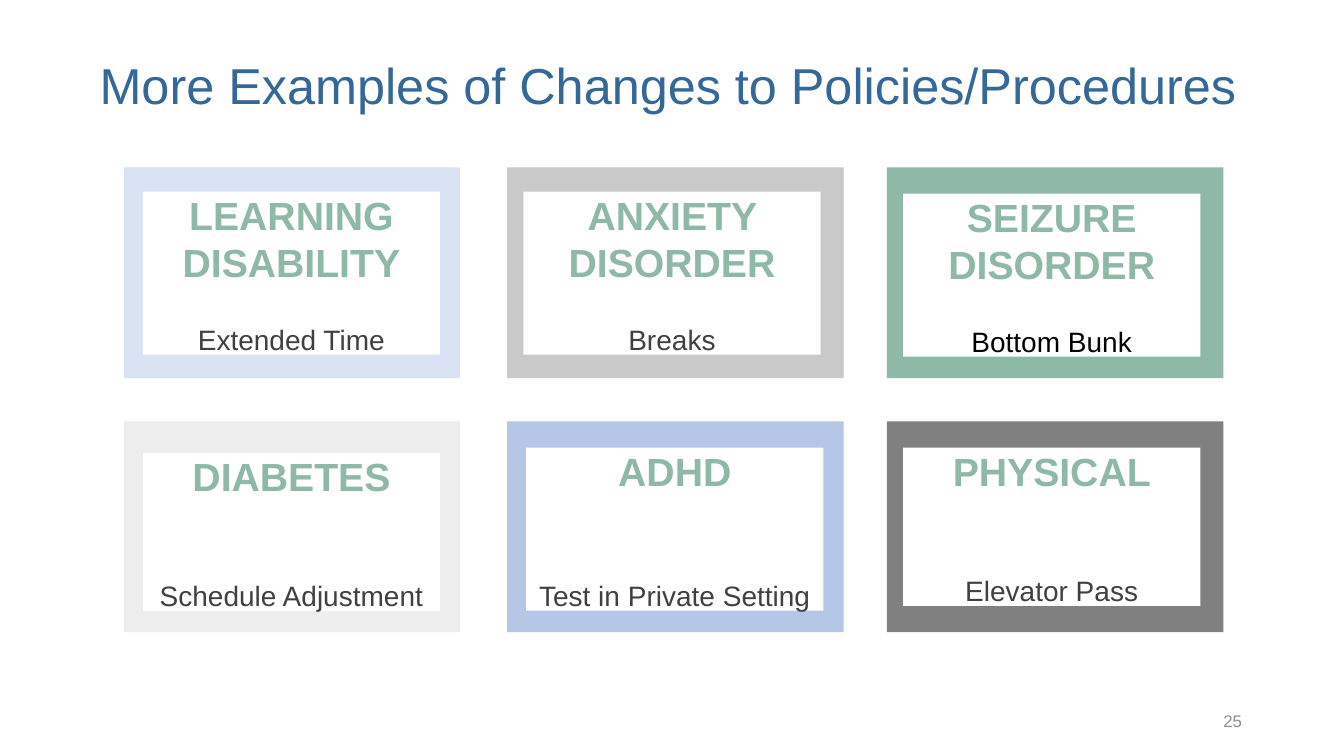
import pptx
import pptx.dml.color
import pptx.enum.shapes
import pptx.enum.text
import pptx.util

Cm = pptx.util.Cm
Pt = pptx.util.Pt
RGBColor = pptx.dml.color.RGBColor
ALIGN = pptx.enum.text.PP_ALIGN
ANCHOR = pptx.enum.text.MSO_ANCHOR

FONT = "Arial"
TITLE_BLUE = RGBColor(0x34, 0x68, 0x98)
GREEN = RGBColor(0x8D, 0xB9, 0xA6)
PALE_BLUE = RGBColor(0xDA, 0xE3, 0xF3)
MID_BLUE = RGBColor(0xB4, 0xC7, 0xE7)
SILVER = RGBColor(0xC9, 0xC9, 0xC9)
PALE_GRAY = RGBColor(0xED, 0xED, 0xED)
GRAY = RGBColor(0x80, 0x80, 0x80)
NUMBER_GRAY = RGBColor(0x8C, 0x8C, 0x8C)
DARK_GRAY = RGBColor(0x40, 0x40, 0x40)
BLACK = RGBColor(0, 0, 0)
WHITE = RGBColor(0xFF, 0xFF, 0xFF)

COLUMN_LEFTS = (3.12, 12.78, 22.35)
ROW_TOPS = (4.22, 10.62)
FRAME_WIDTH, FRAME_HEIGHT = 8.48, 5.31
PANEL_WIDTH = 7.49
HEADING_LINE = Pt(33.6)
DETAIL_LINE = Pt(23)

# heading, detail, frame colour, detail colour, panel offsets and height in cm
CARDS = [
    ("LEARNING DISABILITY", "Extended Time", PALE_BLUE, DARK_GRAY, 0.48, 0.61, 4.11),
    ("ANXIETY DISORDER", "Breaks", SILVER, DARK_GRAY, 0.41, 0.61, 4.11),
    ("SEIZURE DISORDER", "Bottom Bunk", GREEN, BLACK, 0.41, 0.66, 4.11),
    ("DIABETES", "Schedule Adjustment", PALE_GRAY, DARK_GRAY, 0.48, 0.79, 3.99),
    ("ADHD", "Test in Private Setting", MID_BLUE, DARK_GRAY, 0.48, 0.66, 4.11),
    ("PHYSICAL", "Elevator Pass", GRAY, DARK_GRAY, 0.41, 0.66, 3.99),
]


def add_run(paragraph, text, size, color, bold=False):
    run = paragraph.add_run()
    run.text = text
    run.font.name = FONT
    run.font.size = Pt(size)
    run.font.bold = bold
    run.font.color.rgb = color


def clear_margins(text_frame):
    text_frame.margin_left = text_frame.margin_right = 0
    text_frame.margin_top = text_frame.margin_bottom = 0


def add_rectangle(slide, left, top, width, height, color):
    shape = slide.shapes.add_shape(
        pptx.enum.shapes.MSO_SHAPE.RECTANGLE, Cm(left), Cm(top), Cm(width), Cm(height))
    shape.shadow.inherit = False
    shape.fill.solid()
    shape.fill.fore_color.rgb = color
    shape.line.fill.background()
    return shape


def add_text_line(slide, left, top, width, height, text, size, color, alignment):
    """Add a one-line text box, centred vertically, and return its text frame."""
    box = slide.shapes.add_textbox(Cm(left), Cm(top), Cm(width), Cm(height))
    text_frame = box.text_frame
    text_frame.word_wrap = True
    text_frame.vertical_anchor = ANCHOR.MIDDLE
    paragraph = text_frame.paragraphs[0]
    paragraph.alignment = alignment
    add_run(paragraph, text, size, color)
    return text_frame


def add_title(slide, left, top, width, height):
    text_frame = add_text_line(
        slide, left, top, width, height,
        "More Examples of Changes to Policies/Procedures", 36, TITLE_BLUE, ALIGN.LEFT)
    clear_margins(text_frame)
    text_frame.paragraphs[0].line_spacing = 0.9


def add_card(slide, left, top, card):
    """Add a coloured frame with a white panel; the detail sits at the panel's foot."""
    heading, detail, frame_color, detail_color, inset_left, inset_top, panel_height = card
    add_rectangle(slide, left, top, FRAME_WIDTH, FRAME_HEIGHT, frame_color)
    panel = add_rectangle(
        slide, left + inset_left, top + inset_top, PANEL_WIDTH, panel_height, WHITE)
    text_frame = panel.text_frame
    text_frame.word_wrap = True
    text_frame.vertical_anchor = ANCHOR.TOP
    clear_margins(text_frame)

    heading_paragraph = text_frame.paragraphs[0]
    heading_paragraph.alignment = ALIGN.CENTER
    heading_paragraph.line_spacing = HEADING_LINE
    add_run(heading_paragraph, heading, 28, GREEN, bold=True)

    heading_lines = len(heading.split())  # each word takes its own line
    detail_paragraph = text_frame.add_paragraph()
    detail_paragraph.alignment = ALIGN.CENTER
    detail_paragraph.space_before = pptx.util.Emu(
        Cm(panel_height) - heading_lines * HEADING_LINE - DETAIL_LINE)
    add_run(detail_paragraph, detail, 20, detail_color)


def add_card_grid(slide):
    for index, card in enumerate(CARDS):
        row, column = divmod(index, len(COLUMN_LEFTS))
        add_card(slide, COLUMN_LEFTS[column], ROW_TOPS[row], card)


def main():
    presentation = pptx.Presentation()
    presentation.slide_width = Cm(33.87)
    presentation.slide_height = Cm(19.05)
    slide = presentation.slides.add_slide(presentation.slide_layouts[6])
    add_title(slide, 2.51, 1.3, 30.99, 1.83)
    add_card_grid(slide)
    add_text_line(slide, 23.93, 17.65, 7.62, 1.02, "25", 12, NUMBER_GRAY, ALIGN.RIGHT)
    presentation.save("out.pptx")


if __name__ == "__main__":
    main()
